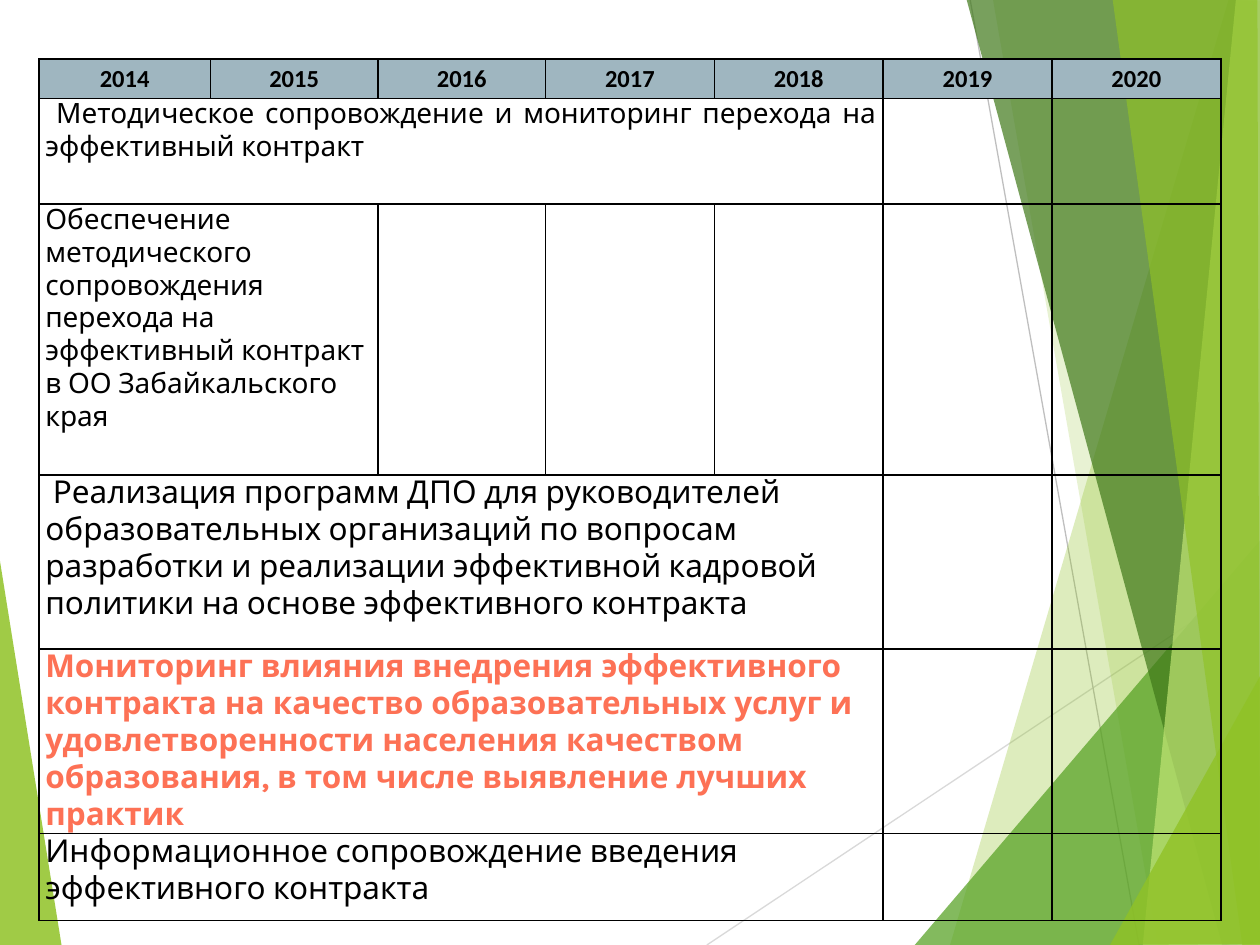
from lxml import etree
from pptx import Presentation
from pptx.dml.color import RGBColor
from pptx.enum import shapes, text
from pptx.oxml import ns
from pptx.util import Inches, Pt

BLACK = RGBColor(0x00, 0x00, 0x00)
CORAL = RGBColor(0xFD, 0x71, 0x55)
HEADER = RGBColor(0x9F, 0xB6, 0xC0)
LIME = RGBColor(0x90, 0xC2, 0x26)
GREEN = RGBColor(0x54, 0xA0, 0x21)
DARK = RGBColor(0x3F, 0x78, 0x19)
PALE = RGBColor(0xC0, 0xE4, 0x74)
LIGHT_GREY = RGBColor(0xD9, 0xD9, 0xD9)
GREY = RGBColor(0xBF, 0xBF, 0xBF)


def add_facet(s, color, alpha, points):
    pts = [(Inches(x), Inches(y)) for x, y in points]
    fb = s.shapes.build_freeform(*pts[0])
    fb.add_line_segments(pts[1:], close=True)
    sp = fb.convert_to_shape()
    sp.shadow.inherit = False
    sp.line.fill.background()
    sp.fill.solid()
    sp.fill.fore_color.rgb = color
    clr = sp._element.spPr.find(".//" + ns.qn("a:srgbClr"))
    etree.SubElement(clr, ns.qn("a:alpha"), val=str(alpha * 1000))


def fill_cell(cell, words, align, spacing, font):
    p = cell.text_frame.paragraphs[0]
    p.alignment = align
    p.line_spacing = spacing
    r = p.add_run()
    r.text = words
    color = font.get("color", BLACK)
    r.font.color.rgb = color
    for name in ("size", "name", "bold"):
        setattr(r.font, name, font[name])


prs = Presentation()
prs.slide_width, prs.slide_height = Inches(10), Inches(7.5)
s = prs.slides.add_slide(prs.slide_layouts[6])

add_facet(s, LIME, 85, [(-0.01, 4.39), (0.49, 7.51), (-0.01, 7.5)])

for x1, y1, x2, y2, color in [
    (5.61, 7.5, 10.01, 4.57, LIGHT_GREY),
    (7.7, 0, 9.04, 7.5, GREY),
]:
    ln = s.shapes.add_connector(
        shapes.MSO_CONNECTOR.STRAIGHT, Inches(x1), Inches(y1), Inches(x2), Inches(y2)
    )
    ln.line.color.rgb = color
    ln.line.width = Pt(0.75)
    etree.SubElement(ln._element.spPr, ns.qn("a:effectLst"))

for color, alpha, points in [
    (LIME, 30, [(9.75, 0), (7.54, 7.5), (10.02, 7.51), (10.01, 0.01)]),
    (LIME, 20, [(7.88, -0.01), (9.19, 7.5), (10.01, 7.5), (10.01, -0.01)]),
    (GREEN, 72, [(7.26, 7.5), (10, 4.29), (10.01, 7.5)]),
    (DARK, 70, [(7.67, -0.01), (9.7, 7.5), (10.01, 7.49), (10.01, -0.01)]),
    (PALE, 70, [(9.81, -0.01), (9.07, 7.5), (10.01, 7.5), (10, -0.01)]),
    (LIME, 65, [(8.83, -0.01), (9.86, 7.5), (10, 7.5), (9.98, -0.01)]),
    (LIME, 80, [(8.81, 7.5), (10.01, 5.35), (10.01, 7.49)]),
]:
    add_facet(s, color, alpha, points)

widths = [1.36, 1.33, 1.33, 1.34, 1.34, 1.34, 1.34]
heights = [0.31, 0.84, 2.15, 1.38, 1.38, 0.69]
tbl = s.shapes.add_table(
    len(heights), len(widths), Inches(0.31), Inches(0.47), Inches(9.38), Inches(6.75)
).table
tbl.first_row = tbl.horz_banding = False
for col, w in zip(tbl.columns, widths):
    col.width = Inches(w)
for row, h in zip(tbl.rows, heights):
    row.height = Inches(h)

margins = {
    "margin_left": Inches(0.05),
    "margin_right": Inches(0.05),
    "margin_top": 0,
    "margin_bottom": 0,
}
for cell in tbl.iter_cells():
    for name, value in margins.items():
        setattr(cell, name, value)
    cell.fill.background()
    tcPr = cell._tc.get_or_add_tcPr()
    for i, side in enumerate(("lnL", "lnR", "lnT", "lnB")):
        ln = etree.Element(ns.qn("a:" + side), w=str(Pt(1)))
        solid = etree.SubElement(ln, ns.qn("a:solidFill"))
        etree.SubElement(solid, ns.qn("a:srgbClr"), val=str(BLACK))
        tcPr.insert(i, ln)

head = {"size": Pt(14), "name": "Calibri", "bold": True}
for i in range(len(widths)):
    cell = tbl.cell(0, i)
    cell.fill.solid()
    cell.fill.fore_color.rgb = HEADER
    fill_cell(cell, str(2014 + i), text.PP_ALIGN.CENTER, 1.15, head)

small = {"size": Pt(16), "name": "Karla", "bold": False}
large = {**small, "size": Pt(18)}
accent = {**large, "bold": True, "color": CORAL}
LEFT, JUSTIFY = text.PP_ALIGN.LEFT, text.PP_ALIGN.JUSTIFY
tasks = [
    (5, JUSTIFY, small, " Методическое сопровождение и мониторинг перехода на эффективный контракт "),
    (2, LEFT, small, "Обеспечение методического сопровождения перехода на эффективный контракт "
     "в ОО Забайкальского края"),
    (5, LEFT, large, " Реализация программ ДПО для руководителей образовательных организаций "
     "по вопросам разработки и реализации эффективной кадровой политики "
     "на основе эффективного контракта"),
    (5, LEFT, accent, "Мониторинг влияния внедрения эффективного контракта на качество "
     "образовательных услуг и удовлетворенности населения качеством образования, "
     "в том числе выявление лучших практик"),
    (5, LEFT, large, "Информационное сопровождение введения эффективного контракта"),
]
for i, (span, align, font, words) in enumerate(tasks, 1):
    cell = tbl.cell(i, 0)
    cell.merge(tbl.cell(i, span - 1))
    fill_cell(cell, words, align, 1.0, font)

prs.save("out.pptx")
